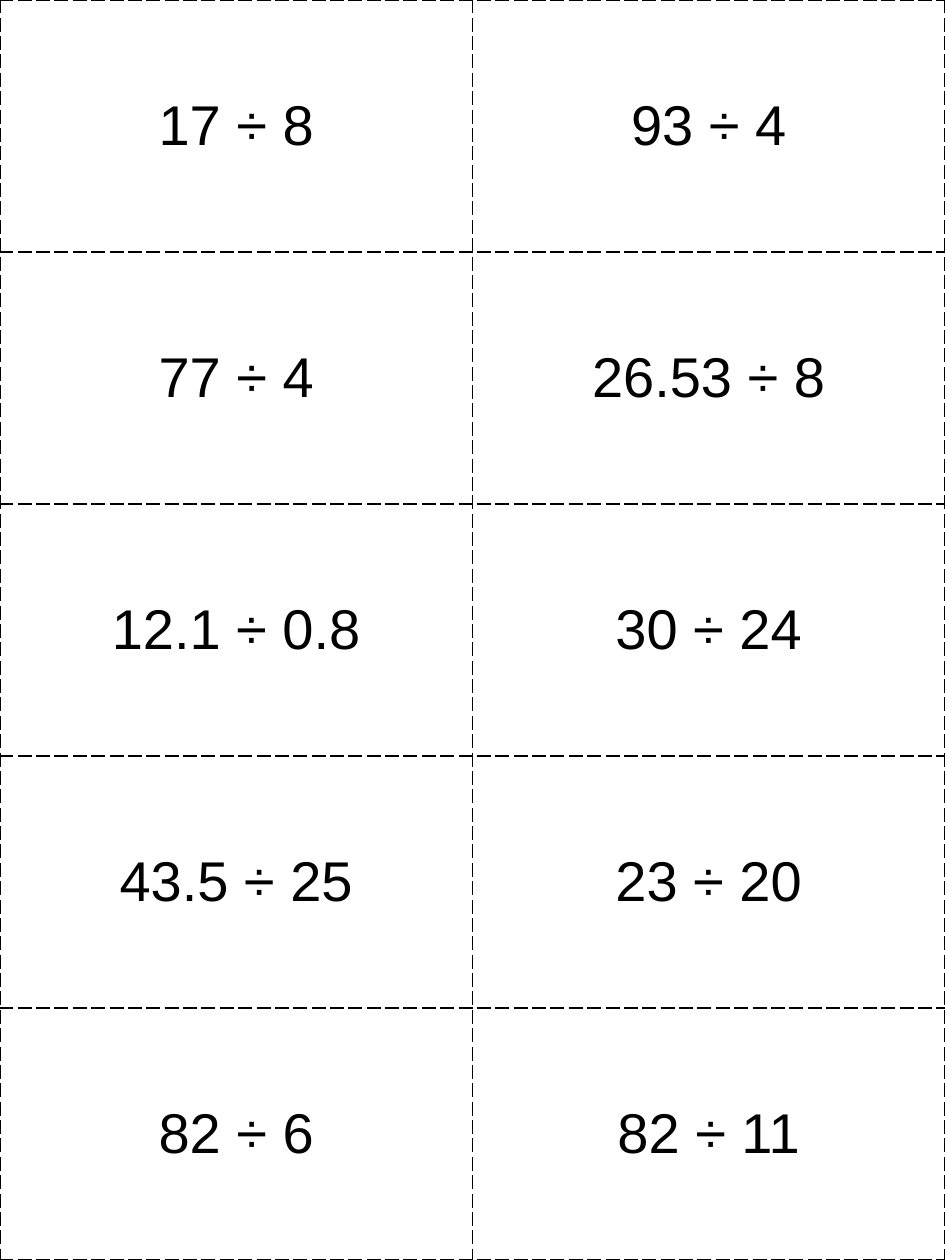
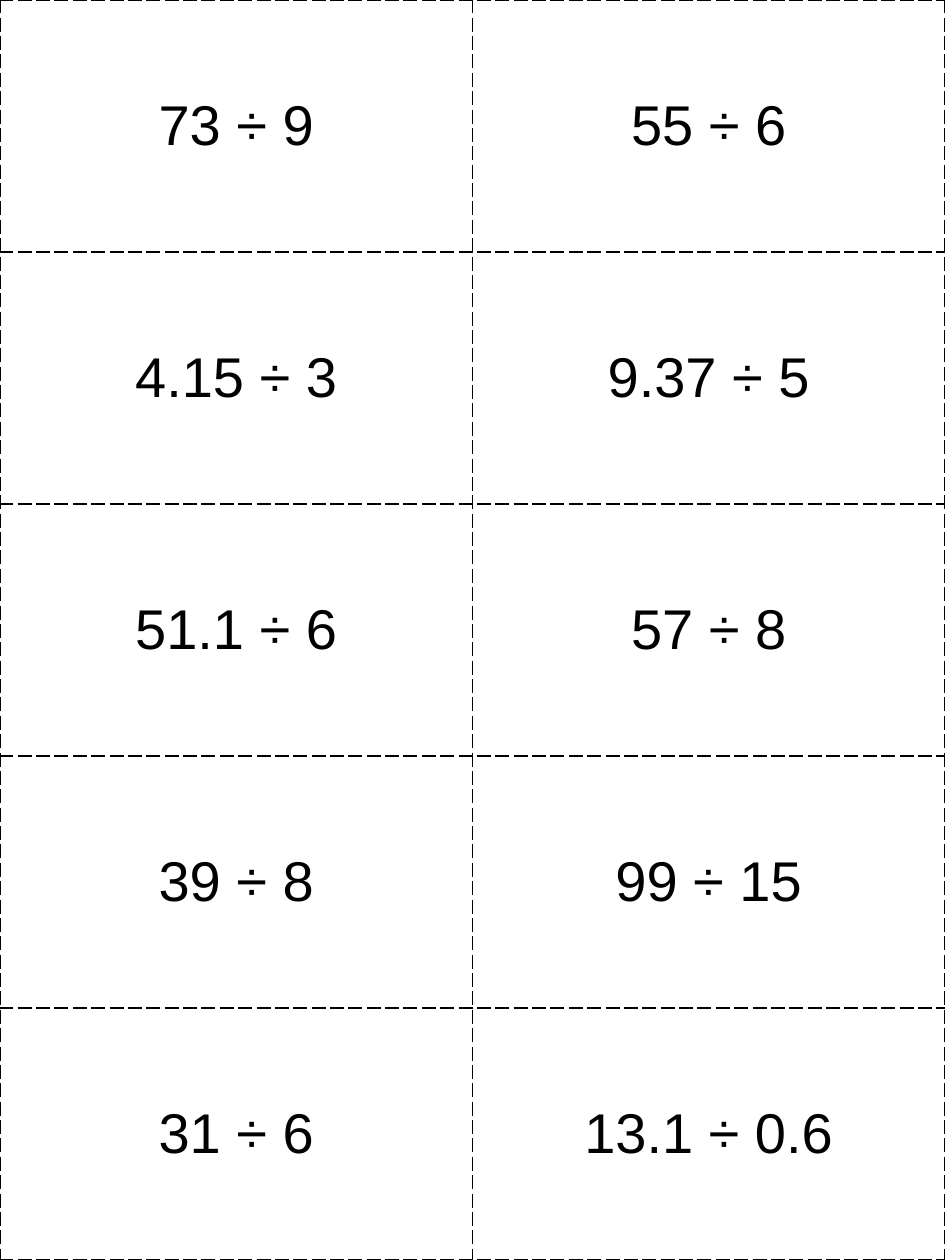
from dataclasses import dataclass

from lxml import etree
from pptx import Presentation
from pptx.dml.color import RGBColor
from pptx.enum.text import MSO_ANCHOR, PP_ALIGN
from pptx.oxml.ns import qn
from pptx.presentation import Presentation as Deck
from pptx.table import _Cell as Cell
from pptx.util import Inches, Pt

CENTER = PP_ALIGN.CENTER
MIDDLE = MSO_ANCHOR.MIDDLE
BLACK = RGBColor(0, 0, 0)
WIDTH = Inches(7.5)
HEIGHT = Inches(10)
BLANK = 6
EDGES = ("a:lnL", "a:lnR", "a:lnT", "a:lnB")
PLAIN = {"first_row": False, "horz_banding": False}
INSET = {
    "vertical_anchor": MIDDLE,
    "margin_left": Inches(0.1),
    "margin_right": Inches(0.1),
    "margin_top": Inches(0.05),
    "margin_bottom": Inches(0.05),
}
FONT = {"name": "Arial", "size": Pt(32)}


@dataclass(frozen=True)
class Sheet:
    cards: tuple[tuple[str, str], ...]


SHEETS = (
    Sheet((
        ("17 ÷ 8", "93 ÷ 4"),
        ("77 ÷ 4", "26.53 ÷ 8"),
        ("12.1 ÷ 0.8", "30 ÷ 24"),
        ("43.5 ÷ 25", "23 ÷ 20"),
        ("82 ÷ 6", "82 ÷ 11"),
    )),
    Sheet((
        ("73 ÷ 9", "55 ÷ 6"),
        ("4.15 ÷ 3", "9.37 ÷ 5"),
        ("51.1 ÷ 6", "57 ÷ 8"),
        ("39 ÷ 8", "99 ÷ 15"),
        ("31 ÷ 6", "13.1 ÷ 0.6"),
    )),
)


def style(item: object, values: dict[str, object]) -> None:
    for name, value in values.items():
        setattr(item, name, value)


def add_edges(cell: Cell) -> None:
    props = cell._tc.get_or_add_tcPr()
    for edge in EDGES:
        line = etree.SubElement(props, qn(edge), w=str(Pt(1)))
        fill = etree.SubElement(line, qn("a:solidFill"))
        etree.SubElement(fill, qn("a:srgbClr"), val=str(BLACK))
        etree.SubElement(line, qn("a:prstDash"), val="lgDash")


def draw_card(cell: Cell, text: str) -> None:
    style(cell, INSET)
    add_edges(cell)
    cell.fill.background()
    para = cell.text_frame.paragraphs[0]
    para.alignment = CENTER
    run = para.add_run()
    run.text = text
    style(run.font, FONT)
    run.font.color.rgb = BLACK


def draw_sheet(deck: Deck, sheet: Sheet) -> None:
    slide = deck.slides.add_slide(deck.slide_layouts[BLANK])
    rows, cols = len(sheet.cards), len(sheet.cards[0])
    grid = slide.shapes.add_table(rows, cols, 0, 0, WIDTH, HEIGHT).table
    style(grid, PLAIN)
    texts = (text for row in sheet.cards for text in row)
    for cell, text in zip(grid.iter_cells(), texts):
        draw_card(cell, text)


def main() -> None:
    deck = Presentation()
    style(deck, {"slide_width": WIDTH, "slide_height": HEIGHT})
    for sheet in SHEETS:
        draw_sheet(deck, sheet)
    deck.save("out.pptx")


if __name__ == "__main__":
    main()
